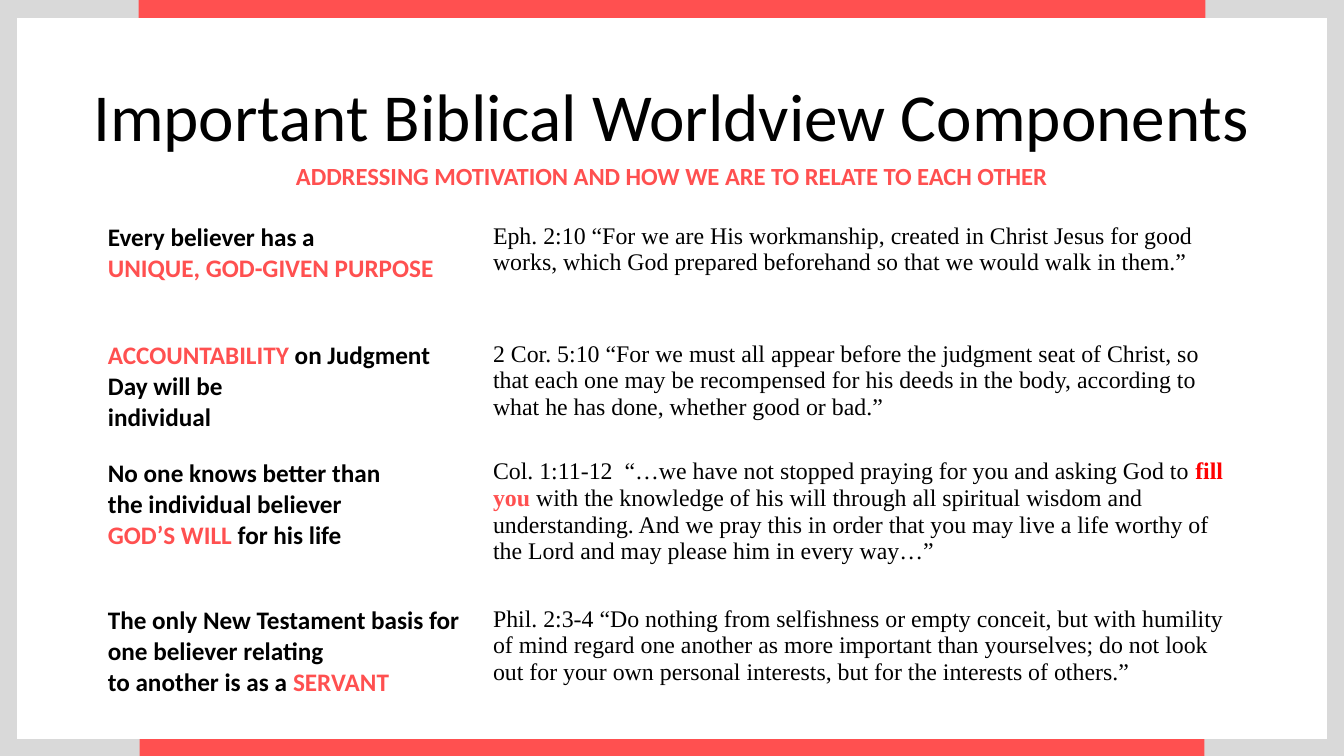
from lxml import etree
from pptx import Presentation
from pptx.dml.color import RGBColor
from pptx.enum.shapes import MSO_CONNECTOR, MSO_SHAPE
from pptx.enum.text import MSO_ANCHOR, PP_ALIGN
from pptx.oxml.ns import qn
from pptx.util import Inches, Pt

STRAIGHT = MSO_CONNECTOR.STRAIGHT
RECTANGLE = MSO_SHAPE.RECTANGLE
MIDDLE = MSO_ANCHOR.MIDDLE
CENTER = PP_ALIGN.CENTER

CORAL, RED, BLACK, WHITE, GREY = "FF5050", "FF0000", "000000", "FFFFFF", "D9D9D9"
SANS, SERIF = "Calibri", "Times New Roman"

TITLE = "Important Biblical Worldview Components "
SUBTITLE = "addressing motivation and how we are to relate to each other"

# Each row: (paragraphs of the point, runs of the verse); a run is (text, colour).
ROWS = [
    ([[("Every believer has a", BLACK)],
      [("UNIQUE, GOD-GIVEN PURPOSE", CORAL)]],
     [("Eph. 2:10 “For we are His workmanship, created in Christ Jesus for good works, "
       "which God prepared beforehand so that we would walk in them.”", BLACK)]),
    ([[("ACCOUNTABILITY", CORAL), (" on Judgment Day will be", BLACK)],
      [("individual", BLACK)]],
     [("2 Cor. 5:10 “For we must all appear before the judgment seat of Christ, so that "
       "each one may be recompensed for his deeds in the body, according to what he has "
       "done, whether good or bad.”", BLACK)]),
    ([[("No one knows better than", BLACK)],
      [("the individual believer", BLACK)],
      [("GOD’S WILL ", CORAL), ("for his life", BLACK)]],
     [("Col. 1:11-12  “…we have not stopped praying for you and asking God to ", BLACK),
      ("fill ", RED), ("you", CORAL),
      (" with the knowledge of his will through all spiritual wisdom and understanding. "
       "And we pray this in order that you may live a life worthy of the Lord and may "
       "please him in every way…”", BLACK)]),
    ([[("The only New Testament basis for one believer relating", BLACK)],
      [("to another is as a ", BLACK), ("SERVANT", CORAL)]],
     [("Phil. 2:3-4 “Do nothing from selfishness or empty conceit, but with humility of "
       "mind regard one another as more important than yourselves; do not look out for "
       "your own personal interests, but for the interests of others.”", BLACK)]),
]
COL_WIDTHS = [3.82, 7.56]
ROW_HEIGHTS = [1.17, 1.17, 1.46, 1.01]
SIDE_BARS = [(12.65, 12.64), (0.68, 0.69)]


def rgb(value):
    return RGBColor.from_string(value)


def add_run(p, text, size, color, font, bold=False):
    r = p.add_run()
    r.text = text
    r.font.size = Pt(size)
    r.font.name = font
    r.font.bold = bold
    r.font.color.rgb = rgb(color)
    return r


def fill_cell(cell, paragraphs, size, font, bold):
    """Write paragraphs of runs; coloured runs are always bold."""
    cell.fill.background()
    tf = cell.text_frame
    for i, runs in enumerate(paragraphs):
        p = tf.add_paragraph() if i else tf.paragraphs[0]
        for text, color in runs:
            add_run(p, text, size, color, font, bold or color != BLACK)


def add_frame(slide):
    """Coral background, grey side bars and the white panel."""
    bg = slide.background.fill
    bg.solid()
    bg.fore_color.rgb = rgb(CORAL)
    for x_top, x_bottom in SIDE_BARS:
        bar = slide.shapes.add_connector(
            STRAIGHT, Inches(x_top), Inches(-0.02), Inches(x_bottom), Inches(7.5))
        bar.line.color.rgb = rgb(GREY)
        bar.line.width = Pt(100)
        etree.SubElement(bar._element.spPr, qn("a:effectLst"))
    panel = slide.shapes.add_shape(
        RECTANGLE, Inches(0.31), Inches(0.32), Inches(12.71), Inches(6.87))
    panel.shadow.inherit = False
    panel.fill.solid()
    panel.fill.fore_color.rgb = rgb(WHITE)
    panel.line.color.rgb = rgb(WHITE)
    panel.line.width = Pt(20)
    ln = panel._element.spPr.find(qn("a:ln"))
    etree.SubElement(ln, qn("a:miter")).set("lim", "800000")


def add_title(slide):
    sp = slide.shapes.add_textbox(Inches(0.67), Inches(0.68), Inches(11.98), Inches(1.28))
    tf = sp.text_frame
    tf.word_wrap = True
    tf.vertical_anchor = MIDDLE
    p = tf.paragraphs[0]
    p.alignment = CENTER
    add_run(p, TITLE, 48, BLACK, SANS)
    r = add_run(p, SUBTITLE, 22, CORAL, SANS, bold=True)
    r.font._element.set("cap", "small")


def add_verses(slide):
    table = slide.shapes.add_table(
        len(ROWS), len(COL_WIDTHS), Inches(0.97), Inches(2.16),
        Inches(sum(COL_WIDTHS)), Inches(sum(ROW_HEIGHTS))).table
    for col, width in zip(table.columns, COL_WIDTHS):
        col.width = Inches(width)
    for i, (point, verse) in enumerate(ROWS):
        table.rows[i].height = Inches(ROW_HEIGHTS[i])
        fill_cell(table.cell(i, 0), point, 18, SANS, True)
        fill_cell(table.cell(i, 1), [verse], 17, SERIF, False)


def main():
    prs = Presentation()
    prs.slide_width, prs.slide_height = Inches(13.33), Inches(7.5)
    slide = prs.slides.add_slide(prs.slide_layouts[6])
    add_frame(slide)
    add_title(slide)
    add_verses(slide)
    prs.save("out.pptx")


if __name__ == "__main__":
    main()
